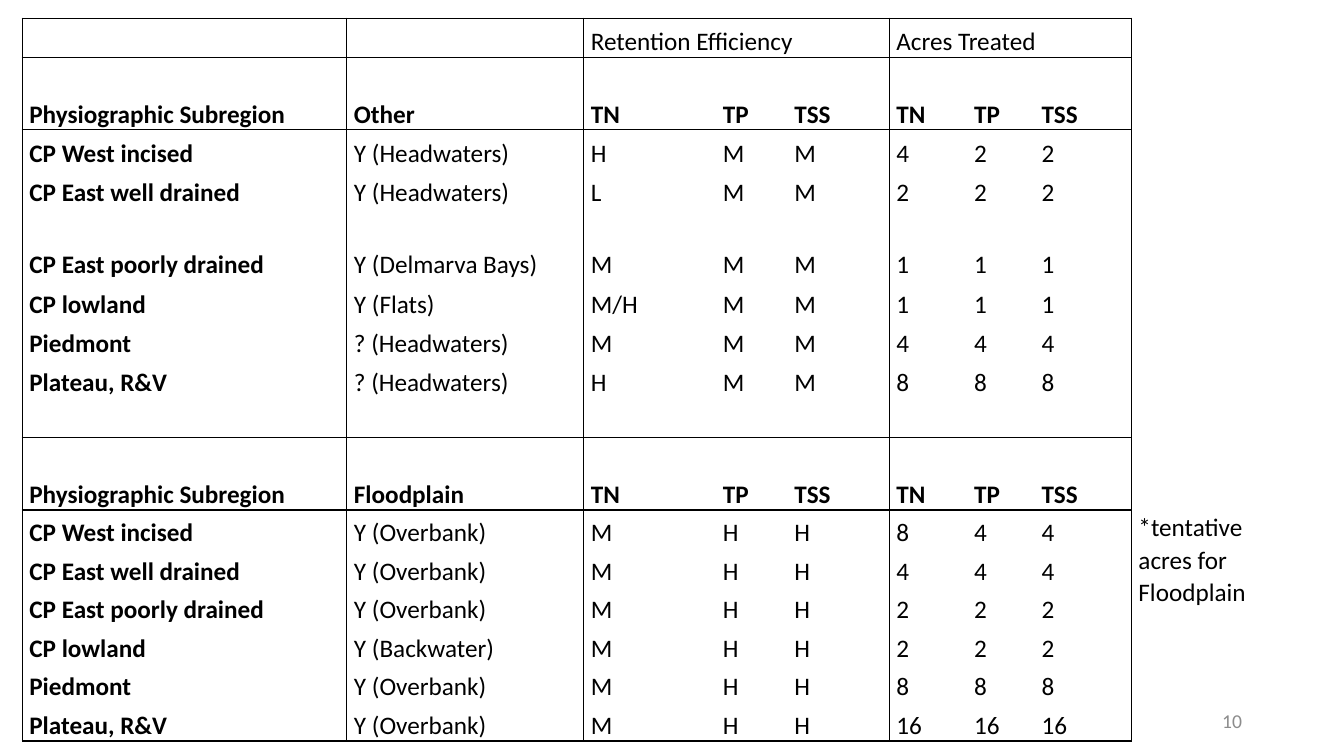
from dataclasses import dataclass

from lxml.etree import SubElement
from pptx import Presentation
from pptx.dml.color import RGBColor
from pptx.enum.text import MSO_ANCHOR, PP_ALIGN
from pptx.oxml.ns import qn
from pptx.util import Cm, Pt


@dataclass(frozen=True)
class Theme:
    """Hold the colours, font and type sizes."""
    ink: str = "000000"
    grey: str = "8C8C8C"
    font: str = "Calibri"
    body: int = 18
    small: int = 14
    rule: float = 1


THEME = Theme()
PLAIN = "{2D5ABB26-0587-4C30-8999-92F81FD0307C}"
WIDTHS = [8.18, 5.97, 3.33, 1.8, 2.57, 1.96, 1.7, 2.44, 3.86]
SHORT, TALL, TIGHT = 0.99, 1.82, 0.97
HEIGHTS = ([SHORT, TALL, SHORT, SHORT, TALL] + [SHORT] * 4
           + [TALL] + [TIGHT] * 6)
HEADS = (1, 9)
NOTE = (10, 8)
LAST = 7
COL_RULES = (0, 1, 2, 5, 8)
ROW_RULES = (0, 1, 2, 9, 10, 16)
GROUPS = {2: "Retention Efficiency", 5: "Acres Treated"}
REGIONS = ["CP West incised", "CP East well drained",
           "CP East poorly drained", "CP lowland", "Piedmont", "Plateau, R&V"]
OTHER = ["Y (Headwaters)|H|M|M|4|2|2", "Y (Headwaters)|L|M|M|2|2|2",
         "Y (Delmarva Bays)|M|M|M|1|1|1", "Y (Flats)|M/H|M|M|1|1|1",
         "? (Headwaters)|M|M|M|4|4|4", "? (Headwaters)|H|M|M|8|8|8"]
FLOOD = ["Y (Overbank)|M|H|H|8|4|4", "Y (Overbank)|M|H|H|4|4|4",
         "Y (Overbank)|M|H|H|2|2|2", "Y (Backwater)|M|H|H|2|2|2",
         "Y (Overbank)|M|H|H|8|8|8", "Y (Overbank)|M|H|H|16|16|16"]


def write(frame, text, size=THEME.body, color=THEME.ink, bold=False,
          align=PP_ALIGN.LEFT, space=1.0):
    """Put one formatted paragraph in a text frame."""
    line = frame.paragraphs[0]
    line.alignment = align
    line.line_spacing = space
    run = line.add_run()
    run.text = text
    run.font.name = THEME.font
    run.font.size = Pt(size)
    run.font.bold = bold
    run.font.color.rgb = RGBColor.from_string(color)


def edge(cell, side, shown):
    """Draw or hide one side of a cell."""
    width = str(Pt(THEME.rule))
    line = SubElement(cell._tc.get_or_add_tcPr(), qn(f"a:ln{side}"), w=width)
    if shown:
        fill = SubElement(line, qn("a:solidFill"))
        SubElement(fill, qn("a:srgbClr"), val=THEME.ink)
    else:
        SubElement(line, qn("a:noFill"))


def block(name, rows):
    """Return a header row and one row for each region."""
    head = ["Physiographic Subregion", name] + ["TN", "TP", "TSS"] * 2
    return [head] + [[region] + row.split("|")
                     for region, row in zip(REGIONS, rows)]


def style(cell, row, col):
    """Set the insets, borders and fill of a cell."""
    cell.margin_left = cell.margin_right = Cm(0.18)
    cell.margin_top = cell.margin_bottom = 0
    cell.vertical_anchor = (MSO_ANCHOR.TOP if (row, col) == NOTE
                            else MSO_ANCHOR.BOTTOM)
    inside = col <= LAST
    edge(cell, "L", col in COL_RULES)
    edge(cell, "R", col + 1 in COL_RULES)
    edge(cell, "T", inside and row in ROW_RULES)
    edge(cell, "B", inside and row + 1 in ROW_RULES)
    cell.fill.background()


def add_grid(slide):
    """Add the table of subregions."""
    frame = slide.shapes.add_table(
        len(HEIGHTS), len(WIDTHS), Cm(0.56), Cm(0.46),
        Cm(sum(WIDTHS)), Cm(sum(HEIGHTS)))
    grid = frame.table
    grid.first_row = grid.horz_banding = False
    grid._tbl.tblPr.find(qn("a:tableStyleId")).text = PLAIN
    for column, width in zip(grid.columns, WIDTHS):
        column.width = Cm(width)
    for line, height in zip(grid.rows, HEIGHTS):
        line.height = Cm(height)
    top = [GROUPS.get(col, "") for col in range(LAST + 1)]
    data = [top, *block("Other", OTHER), [""] * len(top),
            *block("Floodplain", FLOOD)]
    data[NOTE[0]].append("*tentative acres for Floodplain")
    for row in range(len(HEIGHTS)):
        for col in range(len(WIDTHS)):
            cell = grid.cell(row, col)
            style(cell, row, col)
            text = data[row][col] if col < len(data[row]) else ""
            if text:
                bold = row in HEADS or (col == 0 and row > 0)
                write(cell.text_frame, text, bold=bold, space=1.07)
    for col in GROUPS:
        grid.cell(0, col).merge(grid.cell(0, col + 2))
    grid.cell(*NOTE).merge(grid.cell(len(HEIGHTS) - 1, NOTE[1]))


def add_page(slide, text):
    """Add the page number."""
    box = slide.shapes.add_textbox(Cm(23.93), Cm(17.65), Cm(7.62), Cm(1.02))
    frame = box.text_frame
    frame.word_wrap = True
    frame.vertical_anchor = MSO_ANCHOR.MIDDLE
    write(frame, text, size=THEME.small, color=THEME.grey,
          align=PP_ALIGN.RIGHT)


def main():
    """Build and save the slide."""
    deck = Presentation()
    deck.slide_width, deck.slide_height = Cm(33.87), Cm(19.05)
    slide = deck.slides.add_slide(deck.slide_layouts[6])
    add_grid(slide)
    add_page(slide, "10")
    deck.save("out.pptx")


if __name__ == "__main__":
    main()
